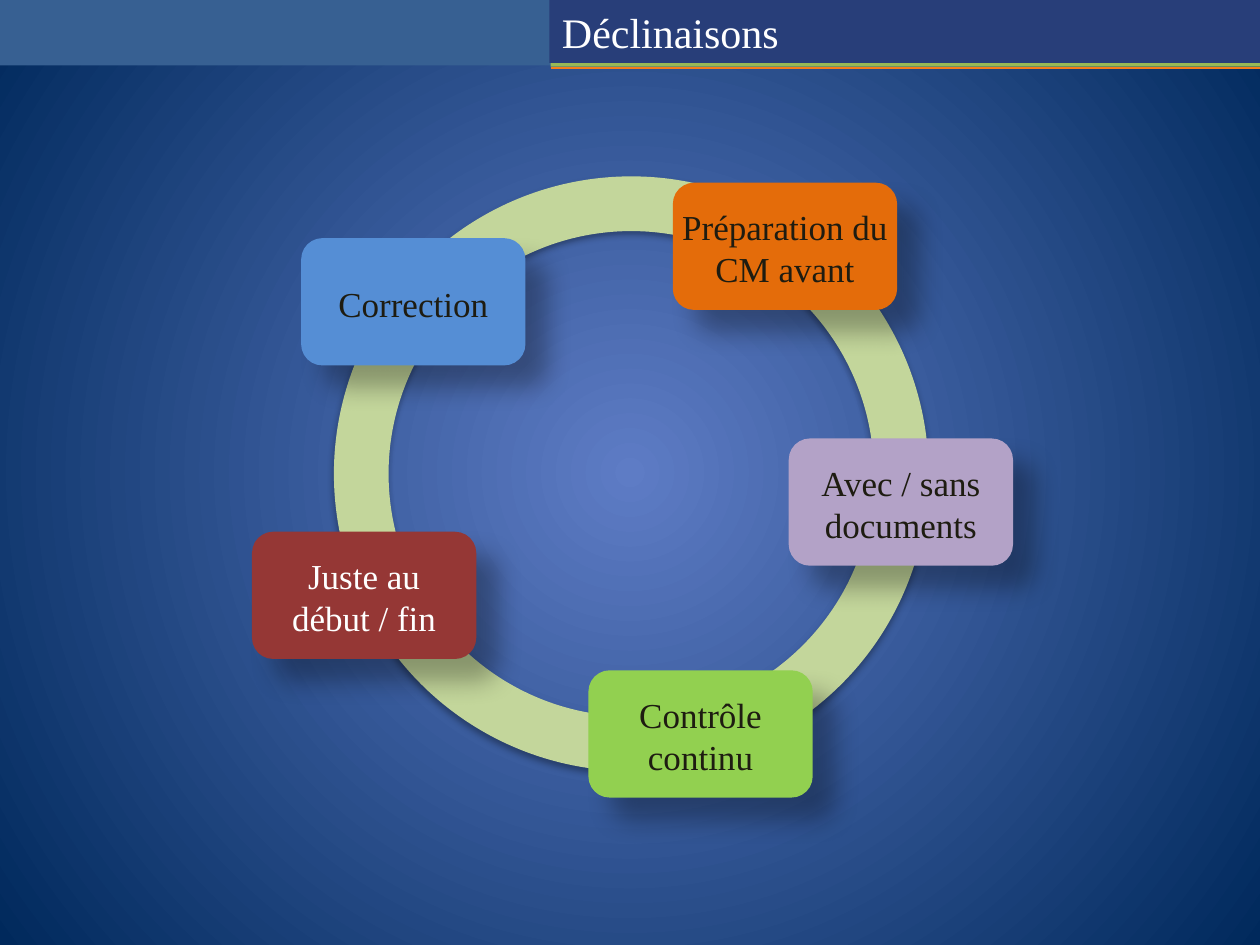
from dataclasses import dataclass

from lxml import etree
from pptx import Presentation
from pptx.dml.color import RGBColor
from pptx.enum.shapes import MSO_CONNECTOR, MSO_SHAPE
from pptx.enum.text import MSO_ANCHOR, MSO_AUTO_SIZE, PP_ALIGN
from pptx.oxml.ns import qn
from pptx.util import Inches, Pt

RECT, ROUNDED, DONUT = MSO_SHAPE.RECTANGLE, MSO_SHAPE.ROUNDED_RECTANGLE, MSO_SHAPE.DONUT
STRAIGHT = MSO_CONNECTOR.STRAIGHT
MIDDLE = MSO_ANCHOR.MIDDLE
LEFT, CENTER = PP_ALIGN.LEFT, PP_ALIGN.CENTER
NO_FIT = MSO_AUTO_SIZE.NONE


@dataclass(frozen=True)
class Theme:
    font: str = "Times New Roman"
    title_size: int = 24
    label_size: int = 20
    glow: str = "5E7CC5"
    edge: str = "00295C"
    bar: str = "376092"
    title_bar: str = "283E79"
    rule: str = "98B955"
    accent: str = "F57D19"
    ring: str = "C3D69B"
    light: str = "FFFFFF"
    dark: str = "1E1C11"


THEME = Theme()
# Shadows: opacity %, blur pt, distance pt, angle
RING_SHADOW = (32, 3.5, 2.2, 90)
CARD_SHADOW = (30, 15, 18, 45)
CARD_W, CARD_H = 1.78, 1.01
# Cards: left and top relative to the cycle, fill, text colour, label
CARDS = [
    (2.69, 0.05, "E46C0A", THEME.dark, "Préparation du\nCM avant"),
    (3.61, 2.08, "B3A2C7", THEME.dark, "Avec / sans\ndocuments"),
    (-0.65, 2.82, "953735", THEME.light, "Juste au\ndébut / fin"),
    (-0.26, 0.49, "558ED5", THEME.dark, "Correction"),
    (2.02, 3.92, "92D050", THEME.dark, "Contrôle continu"),
]


def rgb(value):
    return RGBColor.from_string(value)


def inches(*values):
    return [Inches(v) for v in values]


def add_box(shapes, kind, box, color, shadow=None):
    sp = shapes.add_shape(kind, *inches(*box))
    sp.fill.solid()
    sp.fill.fore_color.rgb = rgb(color)
    sp.line.fill.background()
    sp.shadow.inherit = False
    if shadow:
        add_shadow(sp, *shadow)
    return sp


def add_shadow(sp, opacity, blur, distance, angle):
    effects = sp._element.spPr.find(qn("a:effectLst"))
    outer = etree.SubElement(effects, qn("a:outerShdw"), {
        "blurRad": str(Pt(blur)), "dist": str(Pt(distance)),
        "dir": str(angle * 60000), "algn": "tl", "rotWithShape": "0"})
    color = etree.SubElement(outer, qn("a:srgbClr"), val="000000")
    etree.SubElement(color, qn("a:alpha"), val=str(opacity * 1000))


def write(tf, text, size, color, align):
    frame_format = {"word_wrap": True, "auto_size": NO_FIT, "vertical_anchor": MIDDLE}
    for name, value in frame_format.items():
        setattr(tf, name, value)
    p = tf.paragraphs[0]
    p.text = text
    p.alignment = align
    for r in p.runs:
        for name, value in {"name": THEME.font, "size": Pt(size)}.items():
            setattr(r.font, name, value)
        r.font.color.rgb = rgb(color)


def set_background(s):
    fill = s.background.fill
    fill.gradient()
    for stop, color in zip(fill.gradient_stops, (THEME.glow, THEME.edge)):
        stop.color.rgb = rgb(color)
    # Radial gradient from the centre instead of a linear one
    lin = s._element.find(".//" + qn("a:lin"))
    radial = etree.Element(qn("a:path"), {"path": "circle"})
    etree.SubElement(radial, qn("a:fillToRect"), dict.fromkeys("ltrb", "50000"))
    lin.getparent().replace(lin, radial)


def add_header(s, x, y, w, text):
    split = x + 4.37
    right = x + w
    # Bar with the double rule
    add_box(s.shapes, RECT, (x, y, w, 0.52), THEME.bar)
    add_box(s.shapes, RECT, (split, y + 0.47, right - split, 0.06), THEME.rule)
    line = s.shapes.add_connector(STRAIGHT, *inches(split, y + 0.54, right, y + 0.54))
    line.line.color.rgb = rgb(THEME.accent)
    line.line.width = Pt(1.5)
    etree.SubElement(line._element.spPr, qn("a:effectLst"))

    # Title, in front of the bar
    title = s.shapes.title
    s.shapes._spTree.append(title._element)
    box = inches(split - 0.01, y, right - split + 0.01, 0.5)
    for name, value in zip(("left", "top", "width", "height"), box):
        setattr(title, name, value)
    title.fill.solid()
    title.fill.fore_color.rgb = rgb(THEME.title_bar)
    write(title.text_frame, text, THEME.title_size, THEME.light, LEFT)


def add_card(s, x, y, color, text_color, text):
    group = s.shapes.add_group_shape()
    add_box(group.shapes, ROUNDED, (x, y, CARD_W, CARD_H), color, CARD_SHADOW)
    height = 0.44 if text == "Correction" else 0.77
    top = y + (CARD_H - height) / 2 + 0.01
    label = group.shapes.add_textbox(*inches(x - 0.03, top, CARD_W + 0.06, height))
    write(label.text_frame, text, THEME.label_size, text_color, CENTER)


def add_cycle(s, x, y, size, cards):
    ring = add_box(s.shapes, DONUT, (x, y, size, size), THEME.ring, RING_SHADOW)
    ring.adjustments[0] = 0.092
    for dx, dy, *card in cards:
        add_card(s, x + dx, y + dy, *card)


def main():
    prs = Presentation()
    prs.slide_width, prs.slide_height = inches(10, 7.5)
    s = prs.slides.add_slide(prs.slide_layouts[5])
    set_background(s)
    add_header(s, 0, 0, 10, "Déclinaisons")
    add_cycle(s, 2.65, 1.4, 4.72, CARDS)
    prs.save("out.pptx")


if __name__ == "__main__":
    main()
